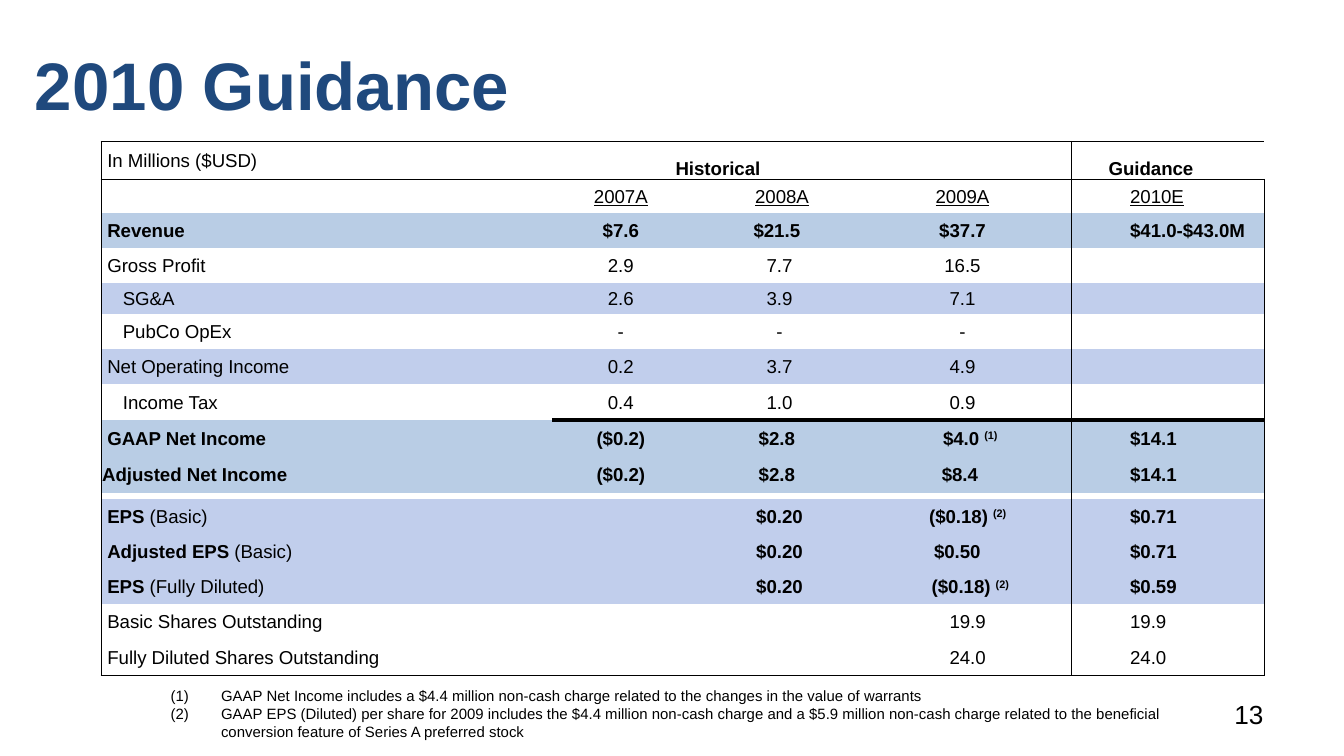
import pptx
import pptx.util
import pptx.dml.color
import pptx.enum.text
import pptx.oxml.ns
from lxml import etree

Pt = pptx.util.Pt
RGB = pptx.dml.color.RGBColor
ALIGN = pptx.enum.text.PP_ALIGN
ANCHOR = pptx.enum.text.MSO_ANCHOR
qn = pptx.oxml.ns.qn

NAVY = RGB(0x1F, 0x49, 0x7D)
BLACK = RGB(0, 0, 0)
STEEL = RGB(0xB9, 0xCD, 0xE5)
LAVENDER = RGB(0xC1, 0xCE, 0xEC)

FONT = "Arial"
SPACE = 2.78   # indent unit: one space at 10 pt
INSET = 0.72
THIN, THICK = 0.25, 2
COL_WIDTHS = (241.9, 73.4, 79.9, 124.6, 31, 72.7)
FIRST_GUIDANCE_COL = 4
THICK_LINE_ROW = 7   # Income Tax: rule below the figures

# height, fill, bold figures, label indent, bold label, plain label,
# (2007A, 2008A, 2009A, 2010E), indents of the 2008A and 2009A figures
ROWS = [
    (20.4, None, True, 1, "", "In Millions ($USD)", ("", "", "", ""), (0, 0)),
    (18, None, False, 1, "", "", ("2007A", "2008A", "2009A", "2010E"), (7, 3)),
    (18.8, STEEL, True, 1, "Revenue", "", ("$7.6", "$21.5", "$37.7", "$41.0-$43.0M"), (5, 3)),
    (18.8, None, False, 1, "", "Gross Profit", ("2.9", "7.7", "16.5", ""), (6, 3)),
    (16.6, LAVENDER, False, 4, "", "SG&A", ("2.6", "3.9", "7.1", ""), (6, 3)),
    (18.8, None, False, 4, "", "PubCo OpEx", ("-", "-", "-", ""), (6, 3)),
    (18.8, LAVENDER, False, 1, "", "Net Operating Income", ("0.2", "3.7", "4.9", ""), (6, 3)),
    (19.3, None, False, 4, "", "Income Tax", ("0.4", "1.0", "0.9", ""), (6, 3)),
    (19.4, STEEL, True, 1, "GAAP Net Income", "", ("($0.2)", "$2.8", "$4.0|(1)", "$14.1"), (5, 6)),
    (19.6, STEEL, True, 0, "Adjusted Net Income", "", ("($0.2)", "$2.8", "$8.4", "$14.1"), (5, 2)),
    (3.3, None, False, 0, "", "", ("", "", "", ""), (0, 0)),
    (18.8, LAVENDER, True, 1, "EPS ", "(Basic)", ("", "$0.20", "($0.18)|(2)", "$0.71"), (6, 5)),
    (18.8, LAVENDER, True, 1, "Adjusted EPS ", "(Basic)", ("", "$0.20", "$0.50", "$0.71"), (6, 1)),
    (18.8, LAVENDER, True, 1, "EPS ", "(Fully Diluted)", ("", "$0.20", "($0.18)|(2)", "$0.59"), (6, 6)),
    (18.8, None, False, 1, "", "Basic Shares Outstanding", ("", "", "19.9", "19.9"), (0, 5)),
    (19.3, None, False, 1, "", "Fully Diluted Shares Outstanding", ("", "", "24.0", "24.0"), (0, 5)),
]

FOOTNOTES = [
    "GAAP Net Income includes a $4.4 million non-cash charge related to the changes "
    "in the value of warrants",
    "GAAP EPS (Diluted) per share for 2009 includes the $4.4 million non-cash charge and a "
    "$5.9 million non-cash charge related to the beneficial conversion feature of Series A "
    "preferred stock",
]


def add_run(p, text, size, color=BLACK, bold=False, underline=False, superscript=False):
    r = p.add_run()
    r.text = text
    f = r.font
    f.name, f.size, f.bold, f.underline = FONT, Pt(size), bold, underline
    f.color.rgb = color
    if superscript:
        r._r.get_or_add_rPr().set("baseline", "30000")


def place(sp, left, top, width, height):
    sp.left, sp.top, sp.width, sp.height = Pt(left), Pt(top), Pt(width), Pt(height)


def set_borders(cell, widths):
    """Draw left, right, top and bottom borders; a width of 0 means no line."""
    tcPr = cell._tc.get_or_add_tcPr()
    for tag, width in zip(("a:lnL", "a:lnR", "a:lnT", "a:lnB"), widths):
        ln = etree.SubElement(tcPr, qn(tag), w=str(int(Pt(width))))
        if width:
            fill = etree.SubElement(ln, qn("a:solidFill"))
            etree.SubElement(fill, qn("a:srgbClr"), val=str(BLACK))
        else:
            etree.SubElement(ln, qn("a:noFill"))


def border_widths(row, col):
    last_row, last_col = len(ROWS) - 1, len(COL_WIDTHS) - 1

    def rule_above(i):
        if i in (0, 1, last_row + 1):
            return THIN
        return THICK if i == THICK_LINE_ROW + 1 and col > 0 else 0

    left = THIN if col in (0, FIRST_GUIDANCE_COL) else 0
    right = THIN if col in (FIRST_GUIDANCE_COL - 1, last_col) else 0
    return left, right, rule_above(row), rule_above(row + 1)


def format_cell(cell, row, col):
    height, fill = ROWS[row][:2]
    set_borders(cell, border_widths(row, col))
    if fill is None:
        cell.fill.background()
    else:
        cell.fill.solid()
        cell.fill.fore_color.rgb = fill
    cell.margin_left = cell.margin_right = cell.margin_top = Pt(INSET)
    cell.margin_bottom = 0
    cell.vertical_anchor = ANCHOR.MIDDLE
    # Keep empty cells from stretching their row
    size = 1 if height < 10 else 10
    etree.SubElement(cell.text_frame.paragraphs[0]._p, qn("a:endParaRPr"), sz=str(size * 100))


def write_cell(cell, runs, indent=0, align=ALIGN.LEFT):
    """Write (text, format) runs at an indent counted in spaces."""
    cell.margin_left = Pt(round(INSET + indent * SPACE, 2))
    p = cell.text_frame.paragraphs[0]
    p.alignment = align
    for text, style in runs:
        if text:
            add_run(p, text, 10, **style)


def add_guidance_table(slide):
    gf = slide.shapes.add_table(len(ROWS), len(COL_WIDTHS), Pt(54), Pt(75.6),
                                Pt(sum(COL_WIDTHS)), Pt(sum(row[0] for row in ROWS)))
    table = gf.table
    table.first_row = table.horz_banding = False
    for column, width in zip(table.columns, COL_WIDTHS):
        column.width = Pt(width)

    for i, (height, _, bold, indent, strong, plain, values, shifts) in enumerate(ROWS):
        table.rows[i].height = Pt(height)
        for col in range(len(COL_WIDTHS)):
            format_cell(table.cell(i, col), i, col)
        write_cell(table.cell(i, 0), [(strong, {"bold": True}), (plain, {})], indent)
        style = {"bold": bold, "underline": i == 1}
        for col, value, shift in zip((1, 2, 3, 5), values, (0, *shifts, 0)):
            figure, _, note = value.partition("|")
            runs = [(figure + " " if note else figure, style),
                    (note, {"bold": bold, "superscript": True})]
            write_cell(table.cell(i, col), runs, shift, ALIGN.LEFT if col == 5 else ALIGN.CENTER)

    # Group headings over the year columns
    for first, last, text, indent in ((1, 3, "Historical", 23.5), (4, 5, "Guidance", 7)):
        cell = table.cell(0, first)
        cell.merge(table.cell(0, last))
        cell.vertical_anchor = ANCHOR.BOTTOM
        write_cell(cell, [(text, {"bold": True})], indent)


def add_title(slide, text):
    sp = slide.shapes.title
    place(sp, 11.5, 16.6, 495.4, 67.7)
    tf = sp.text_frame
    tf.vertical_anchor = ANCHOR.MIDDLE
    tf.margin_bottom = Pt(15)
    p = tf.paragraphs[0]
    p.alignment = ALIGN.LEFT
    add_run(p, text, 36, NAVY, bold=True)


def add_footnotes(slide):
    sp = slide.placeholders[1]
    place(sp, 84.2, 364.3, 551.5, 46)
    tf = sp.text_frame
    tf.auto_size = pptx.enum.text.MSO_AUTO_SIZE.NONE
    for i, text in enumerate(FOOTNOTES):
        p = tf.add_paragraph() if i else tf.paragraphs[0]
        pPr = p._p.get_or_add_pPr()
        pPr.set("marL", str(int(Pt(27))))
        pPr.set("indent", str(int(Pt(-27))))
        etree.SubElement(pPr, qn("a:buFont"), typeface=FONT)
        etree.SubElement(pPr, qn("a:buAutoNum"), type="arabicParenBoth")
        p.space_before = Pt(0)
        add_run(p, text, 8)


def add_page_number(slide, number):
    sp = slide.shapes.add_textbox(Pt(516.2), Pt(368.6), Pt(167.8), Pt(28))
    tf = sp.text_frame
    tf.word_wrap = True
    tf.vertical_anchor = ANCHOR.MIDDLE
    p = tf.paragraphs[0]
    p.alignment = ALIGN.RIGHT
    add_run(p, number, 14)


def main():
    prs = pptx.Presentation()
    prs.slide_width, prs.slide_height = Pt(720), Pt(405)
    s = prs.slides.add_slide(prs.slide_layouts[1])
    add_title(s, "2010 Guidance")
    add_page_number(s, "13")
    add_guidance_table(s)
    add_footnotes(s)
    prs.save("out.pptx")


if __name__ == "__main__":
    main()
